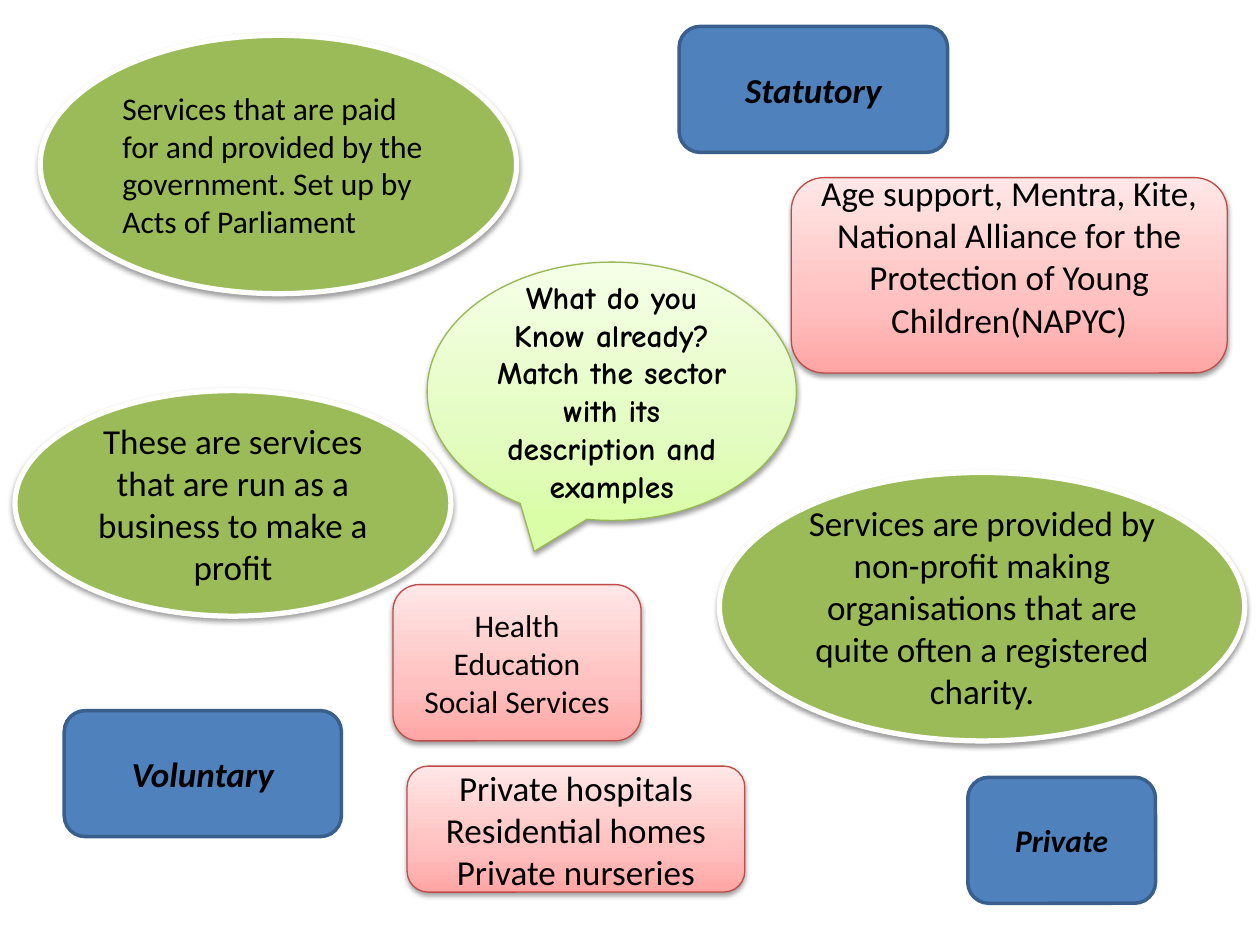
from copy import deepcopy

from lxml import etree
from pptx import Presentation
from pptx.dml.color import RGBColor
from pptx.enum.shapes import MSO_SHAPE as SHAPE
from pptx.enum.text import MSO_ANCHOR as ANCHOR, PP_ALIGN as ALIGN
from pptx.oxml.ns import qn
from pptx.util import Pt

PINK = ("FFA6A5", "FFC0BF", "FFE7E7")
LIME = ("DAFDA7", "E4FCC2", "F5FFE7")


def rgb(value):
    return RGBColor.from_string(value)


def write(tf, text, size=20, font="Calibri", color="000000", bold=False,
          italic=False, align=ALIGN.CENTER, bottom=3.6):
    tf.word_wrap = True
    tf.vertical_anchor = ANCHOR.MIDDLE
    tf.margin_bottom = Pt(bottom)
    tf.text = text
    for p in tf.paragraphs:
        p.alignment = align
        for r in p.runs:
            r.font.name = font
            r.font.size = Pt(size)
            r.font.bold = bold
            r.font.italic = italic
            r.font.color.rgb = rgb(color)


def fill_gradient(sp, colors, positions=(0, 0.35, 1)):
    sp.fill.gradient()
    sp.fill.gradient_angle = 90
    first = sp.element.spPr.find(".//" + qn("a:gs"))
    first.addnext(deepcopy(first))
    for stop, color, position in zip(sp.fill.gradient_stops, colors, positions):
        stop.color.rgb = rgb(color)
        stop.position = position


def add_shadow(sp):
    effects = sp.element.spPr.find(qn("a:effectLst"))
    shadow = etree.SubElement(effects, qn("a:outerShdw"), blurRad=str(Pt(3.1)),
                              dist=str(Pt(1.6)), dir="5400000", rotWithShape="0")
    color = etree.SubElement(shadow, qn("a:srgbClr"), val="000000")
    etree.SubElement(color, qn("a:alpha"), val="38000")


class Board:
    def __init__(self, prs):
        self.s = prs.slides.add_slide(prs.slide_layouts[6])

    def shape(self, kind, box, fill, line, weight, shadow=True):
        sp = self.s.shapes.add_shape(kind, *map(Pt, box))
        sp.shadow.inherit = False
        if isinstance(fill, tuple):
            fill_gradient(sp, fill)
        else:
            sp.fill.solid()
            sp.fill.fore_color.rgb = rgb(fill)
        sp.line.color.rgb = rgb(line)
        sp.line.width = Pt(weight)
        if shadow:
            add_shadow(sp)
        return sp

    def description(self, box, text, **fmt):
        sp = self.shape(SHAPE.OVAL, box, "9BBB59", "FFFFFF", 3)
        write(sp.text_frame, text, **fmt)

    def sector(self, box, text, **fmt):
        sp = self.shape(SHAPE.ROUNDED_RECTANGLE, box, "4F81BD", "3A5F8C", 2,
                        shadow=False)
        write(sp.text_frame, text, bold=True, italic=True, **fmt)

    def examples(self, box, text, **fmt):
        sp = self.shape(SHAPE.ROUNDED_RECTANGLE, box, PINK, "BF4C48", 0.75)
        write(sp.text_frame, text, **fmt)

    def question(self, box, text, tail):
        sp = self.shape(SHAPE.OVAL_CALLOUT, box, LIME, "98B955", 0.75)
        sp.adjustments[0], sp.adjustments[1] = tail
        write(sp.text_frame, text, size=18, font="Comic Neue", bold=True)


def main():
    prs = Presentation()
    prs.slide_width, prs.slide_height = Pt(720), Pt(540)
    board = Board(prs)

    board.description((23, 20.2, 272.2, 147.6),
                      "Services that are paid for and provided by the government. "
                      "Set up by Acts of Parliament", size=18, align=ALIGN.LEFT)
    board.sector((388.1, 15.1, 153.4, 72), "Statutory")
    board.description((8.6, 223.2, 249.1, 128.9),
                      "These are services that are run as a business to make a profit")
    board.sector((553, 444.2, 107.3, 72), "Private", size=18)
    board.description((411.1, 270, 300.2, 153.4),
                      "Services are provided by non-profit making organisations "
                      "that are quite often a registered charity.")
    board.sector((36.7, 406.1, 158.4, 72), "Voluntary")
    board.examples((224.6, 334.1, 141.8, 89.3),
                   "Health\nEducation\nSocial Services", size=18)
    board.examples((452.2, 101.5, 249.1, 111.6),
                   "Age support, Mentra, Kite, National Alliance for the Protection "
                   "of Young Children(NAPYC)", bottom=25.6)
    board.examples((232.6, 437.8, 193, 72),
                   "Private hospitals Residential homes Private nurseries")
    board.question((244.1, 149.8, 211, 147.6),
                   "What do you Know already?\n"
                   "Match the sector with its description and examples",
                   tail=(-0.21, 0.62))

    prs.save("out.pptx")


if __name__ == "__main__":
    main()
